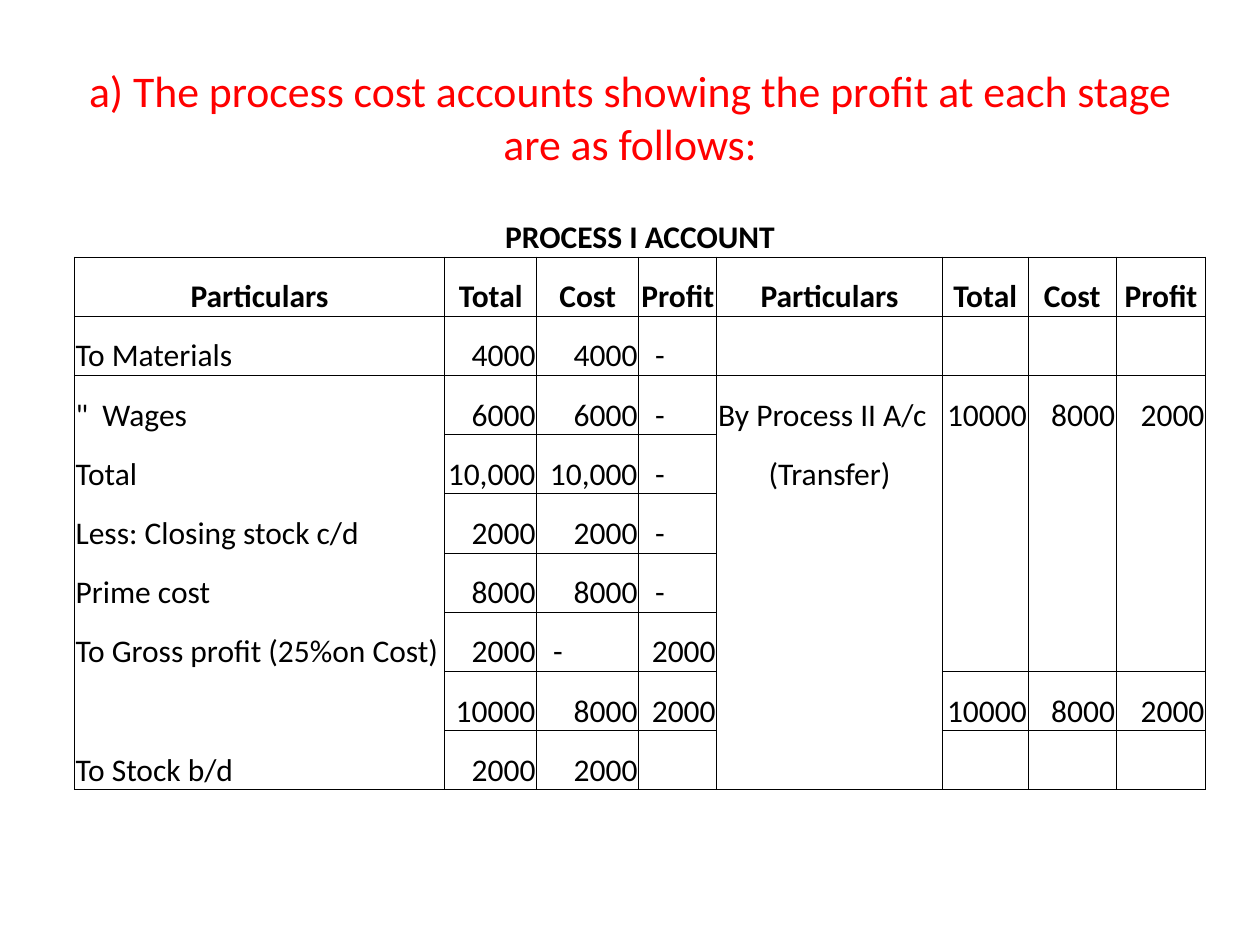
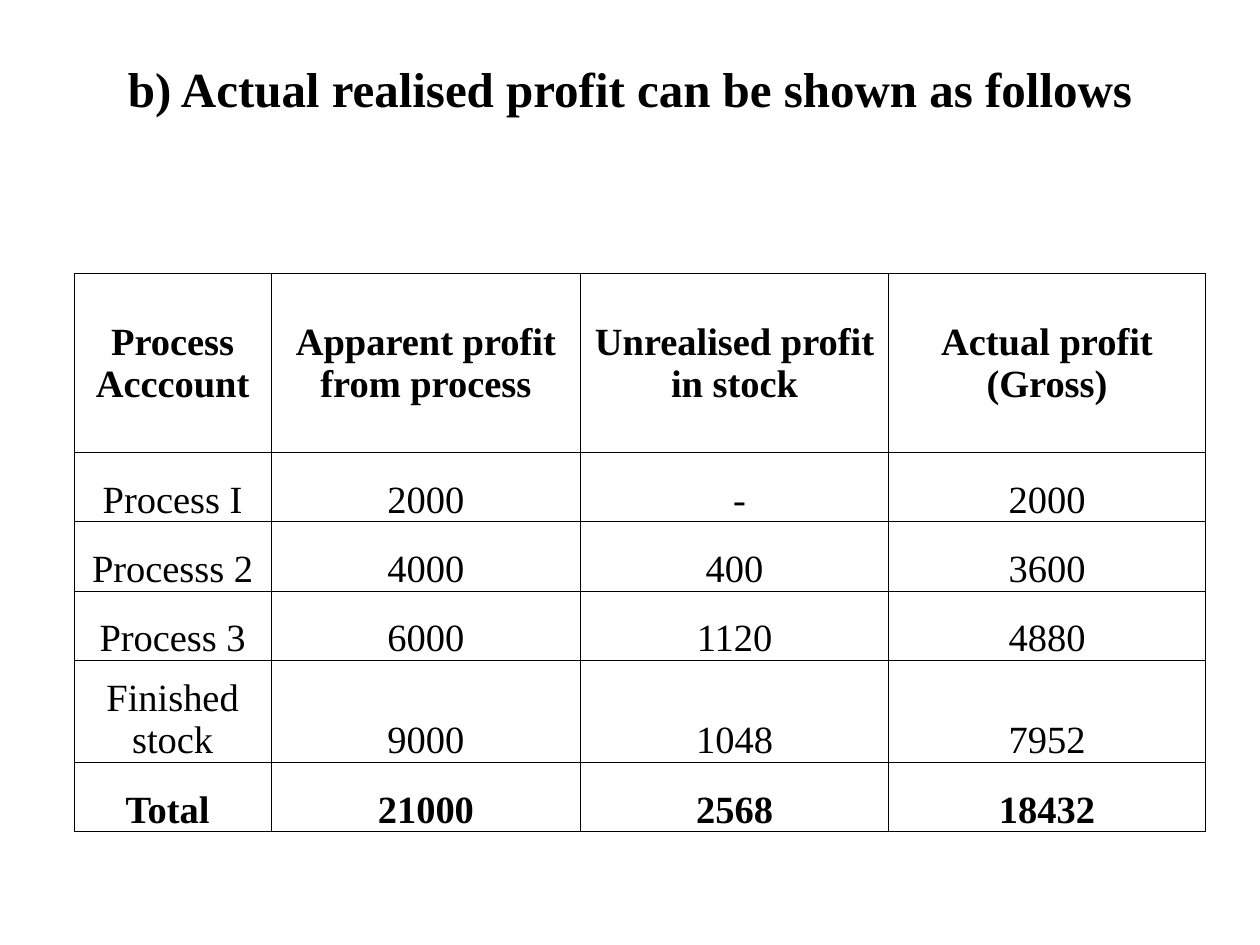
from lxml import etree
from pptx import Presentation
from pptx import util as u
from pptx.dml.color import RGBColor
from pptx.enum import text
from pptx.oxml.ns import qn

BLACK, RED = "000000", "FF0000"
SANS, SERIF = "Calibri", "Times New Roman"
LEFT, CENTER, RIGHT = text.PP_ALIGN.LEFT, text.PP_ALIGN.CENTER, text.PP_ALIGN.RIGHT
MIDDLE, BOTTOM = text.MSO_ANCHOR.MIDDLE, text.MSO_ANCHOR.BOTTOM
NO_GRID = "{2D5ABB26-0587-4C30-8999-92F81FD0307C}"
INSET = 0.01

ACCOUNT_COLS = [2.94, 0.73, 0.81, 0.62, 1.79, 0.68, 0.7, 0.71]
ACCOUNT_HEIGHTS = [0.49] + [0.47] * 9
ACCOUNT = [
    ["PROCESS I ACCOUNT"],
    ["Particulars", "Total", "Cost", "Profit"] * 2,
    ["To Materials", "4000", "4000", "-"],
    ['"  Wages', "6000", "6000", "-", "By Process II A/c", "10000", "8000", "2000"],
    ["Total", "10,000", "10,000", "-", "(Transfer)"],
    ["Less: Closing stock c/d", "2000", "2000", "-"],
    ["Prime cost", "8000", "8000", "-"],
    ["To Gross profit (25%on Cost)", "2000", "-", "2000"],
    ["", "10000", "8000", "2000", "", "10000", "8000", "2000"],
    ["To Stock b/d", "2000", "2000"],
]
ALL, DEBIT, AMOUNTS = range(8), (1, 2, 3), (1, 2, 3, 5, 6, 7)
ACCOUNT_RULES = {0: ALL, 1: ALL, 3: DEBIT, 5: DEBIT, 7: AMOUNTS, 8: AMOUNTS, 9: ALL}
ACCOUNT_INDENTS = {"-": 0.13, "(Transfer)": 0.41}

PROFIT_COLS = [1.56, 2.46, 2.44, 2.52]
PROFIT_HEIGHTS = [0.55, 1.42, 0.55, 0.55, 0.55, 0.81, 0.55]
PROFIT = [
    [],
    ["Process Acccount", "Apparent profit from process",
     "Unrealised profit in stock", "Actual profit (Gross)"],
    ["Process I", "2000", "-", "2000"],
    ["Processs 2", "4000", "400", "3600"],
    ["Process 3", "6000", "1120", "4880"],
    ["Finished stock", "9000", "1048", "7952"],
    ["Total", "21000", "2568", "18432"],
]
PROFIT_RULES = {row: range(4) for row in range(len(PROFIT))}


def rgb(value):
    """Turn a hex string into a colour."""
    return RGBColor.from_string(value)


def add_run(p, words, font, size, color=BLACK, bold=False):
    """Add one formatted run to a paragraph."""
    r = p.add_run()
    r.text = words
    r.font.name, r.font.size, r.font.bold = font, u.Pt(size), bold
    r.font.color.rgb = rgb(color)


def add_title(slide, words, font, size, color=BLACK, bold=False, bottom=0.05):
    """Add the centred slide title."""
    sp = slide.shapes.add_textbox(u.Inches(0.5), u.Inches(0.3), u.Inches(9), u.Inches(1.25))
    tf = sp.text_frame
    tf.word_wrap = True
    tf.vertical_anchor = MIDDLE
    tf.margin_bottom = u.Inches(bottom)
    p = tf.paragraphs[0]
    p.alignment = CENTER
    add_run(p, words, font, size, color, bold)


def add_border(cell, side):
    """Draw a thin black line on one side of a cell."""
    ln = etree.SubElement(cell._tc.get_or_add_tcPr(), qn("a:ln" + side), w=str(u.Pt(0.5)))
    fill = etree.SubElement(ln, qn("a:solidFill"))
    etree.SubElement(fill, qn("a:srgbClr"), val=BLACK)


def set_cell(cell, words, font, size, bold, align, anchor, left=INSET, right=INSET):
    """Write a cell's text and set its insets."""
    cell.margin_left, cell.margin_right = u.Inches(left), u.Inches(right)
    cell.margin_top, cell.margin_bottom = u.Inches(INSET), 0
    cell.vertical_anchor = anchor
    p = cell.text_frame.paragraphs[0]
    p.alignment = align
    add_run(p, words, font, size, bold=bold)


def add_ruled_table(slide, top, cols, heights, rules):
    """Add a table with a merged, open first row and rules below the given cells."""
    frame = slide.shapes.add_table(
        len(heights), len(cols), u.Inches(0.59), u.Inches(top),
        u.Inches(sum(cols)), u.Inches(sum(heights)))
    table = frame.table
    table.first_row = table.horz_banding = False
    table._tbl.tblPr.find(qn("a:tableStyleId")).text = NO_GRID
    for column, width in zip(table.columns, cols):
        column.width = u.Inches(width)
    for row, height in zip(table.rows, heights):
        row.height = u.Inches(height)
    for r in range(len(heights)):
        for c in range(len(cols)):
            cell = table.cell(r, c)
            sides = "LR" if r else ""
            sides += "T" if c in rules.get(r - 1, ()) else ""
            sides += "B" if c in rules.get(r, ()) else ""
            for side in sides:
                add_border(cell, side)
            cell.fill.background()
    table.cell(0, 0).merge(table.cell(0, len(cols) - 1))
    return table


def fill_account(table):
    """Write the process account: centred headings, amounts to the right."""
    for r, row in enumerate(ACCOUNT):
        for c in range(len(ACCOUNT_COLS)):
            words = row[c] if c < len(row) else ""
            heading = r < 2
            amount = words.replace(",", "").isdigit()
            align = CENTER if heading else RIGHT if amount else LEFT
            set_cell(table.cell(r, c), words, SANS, 18, heading, align, BOTTOM,
                     left=ACCOUNT_INDENTS.get(words, INSET))


def fill_profit(table):
    """Write the profit table: everything centred, headings and total bold."""
    for r, row in enumerate(PROFIT):
        for c, words in enumerate(row):
            set_cell(table.cell(r, c), words, SERIF, 22, r in (1, len(PROFIT) - 1),
                     CENTER, MIDDLE if r == 1 else BOTTOM,
                     left=0.09 if words == "-" else INSET,
                     right=0.09 if words == "Total" else INSET)


def main():
    """Build both slides and save them."""
    prs = Presentation()
    prs.slide_width, prs.slide_height = u.Inches(10), u.Inches(7.5)
    blank = prs.slide_layouts[6]

    s = prs.slides.add_slide(blank)
    add_title(s, "a) The process cost accounts showing the profit at each stage are as follows:",
              SANS, 25, RED)
    fill_account(add_ruled_table(s, 1.55, ACCOUNT_COLS, ACCOUNT_HEIGHTS, ACCOUNT_RULES))

    s = prs.slides.add_slide(blank)
    add_title(s, "b) Actual realised profit can be shown as follows", SERIF, 28,
              bold=True, bottom=0.5)
    fill_profit(add_ruled_table(s, 1.62, PROFIT_COLS, PROFIT_HEIGHTS, PROFIT_RULES))

    prs.save("out.pptx")


if __name__ == "__main__":
    main()
